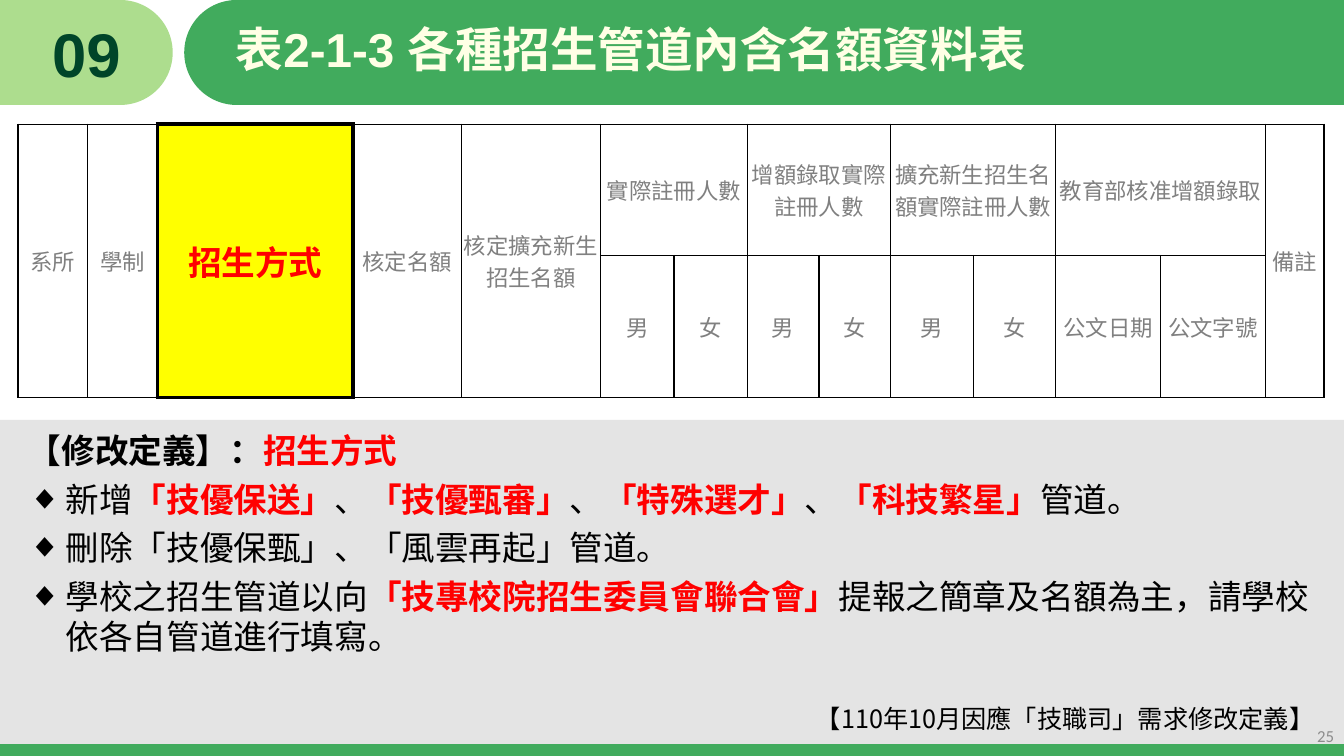
from lxml.etree import SubElement
from pptx import Presentation
from pptx.dml.color import RGBColor
from pptx.enum.shapes import MSO_SHAPE
from pptx.enum.text import MSO_ANCHOR, PP_ALIGN
from pptx.oxml.ns import qn
from pptx.util import Pt

WIDTH, HEIGHT = 960, 540
CJK = "Noto Sans CJK SC"
GREEN, LIGHT_GREEN, DARK_GREEN = "41AB5D", "ADDD8E", "004529"
BLACK, RED, GREY, YELLOW, WHITE = "000000", "FF0000", "808080", "FFFF00", "FFFFFF"

COLUMN_WIDTHS = [49.8, 49.8, 139.8, 77.4, 99.4, 52.4, 52.4,
                 51.2, 51.2, 59, 59, 74.8, 74.8, 42]
ROW_HEIGHTS = [93.6, 101.5]
# (column, heading, sub-headings)
HEADINGS = [
    (0, "系所", []),
    (1, "學制", []),
    (2, "招生方式", []),
    (3, "核定名額", []),
    (4, "核定擴充新生招生名額", []),
    (5, "實際註冊人數", ["男", "女"]),
    (7, "增額錄取實際註冊人數", ["男", "女"]),
    (9, "擴充新生招生名額實際註冊人數", ["男", "女"]),
    (11, "教育部核准增額錄取", ["公文日期", "公文字號"]),
    (13, "備註", []),
]
KEY_COLUMN = 2

# Each bullet is a list of (text, emphasised)
BULLETS = [
    [("新增", False), ("「技優保送」", True), ("、", False), ("「技優甄審」", True),
     ("、", False), ("「特殊選才」", True), ("、", False), ("「科技繁星」", True),
     ("管道。", False)],
    [("刪除「技優保甄」、「風雲再起」管道。", False)],
    [("學校之招生管道以向", False), ("「技專校院招生委員會聯合會」", True),
     ("提報之簡章及名額為主，請學校依各自管道進行填寫。", False)],
]


def colour(value):
    return RGBColor.from_string(value)


def set_all(target, **values):
    for name, value in values.items():
        setattr(target, name, value)


def add_span(para, text, size, fill, bold=False, font=CJK):
    span = para.add_run()
    span.text = text
    set_all(span.font, size=Pt(size), bold=bold, name=font)
    span.font.color.rgb = colour(fill)
    SubElement(span.font._element, qn("a:ea"), typeface=CJK)


def add_block(page, kind, left, top, width, height, fill):
    block = page.shapes.add_shape(kind, Pt(left), Pt(top), Pt(width), Pt(height))
    block.shadow.inherit = False
    block.fill.solid()
    block.fill.fore_color.rgb = colour(fill)
    block.line.fill.background()
    return block


def add_text_box(page, left, top, width, height, anchor, align):
    box = page.shapes.add_textbox(Pt(left), Pt(top), Pt(width), Pt(height))
    set_all(box.text_frame, word_wrap=True, vertical_anchor=anchor)
    para = box.text_frame.paragraphs[0]
    para.alignment = align
    return box.text_frame, para


def add_background(page, top, strip):
    panel = add_block(page, MSO_SHAPE.RECTANGLE, 0, top, WIDTH, HEIGHT - top, "BFBFBF")
    shade = panel.fill._xPr.find(qn("a:solidFill"))[0]
    SubElement(shade, qn("a:alpha"), val="41000")
    add_block(page, MSO_SHAPE.RECTANGLE, 0, HEIGHT - strip, WIDTH, strip, GREEN)


def add_header(page, height, number, title):
    # Number tab and title band, each with one round end
    tab, band = 123.4, 131.6
    radius = height / 2
    for kind, left, width, fill in [
        (MSO_SHAPE.RECTANGLE, 0, tab - radius, LIGHT_GREEN),
        (MSO_SHAPE.OVAL, tab - height, height, LIGHT_GREEN),
        (MSO_SHAPE.OVAL, band, height, GREEN),
        (MSO_SHAPE.RECTANGLE, band + radius, WIDTH - band - radius, GREEN),
    ]:
        add_block(page, kind, left, 0, width, height, fill)

    holder = page.shapes.title
    set_all(holder, left=Pt(161.3), top=Pt(0), width=Pt(784.8), height=Pt(height))
    set_all(holder.text_frame, word_wrap=True, vertical_anchor=MSO_ANCHOR.MIDDLE)
    para = holder.text_frame.paragraphs[0]
    set_all(para, alignment=PP_ALIGN.LEFT, line_spacing=0.9)
    add_span(para, title, 34, "FFFFE5", True, "Arial")

    para = add_text_box(page, 0, 0, tab, height, MSO_ANCHOR.MIDDLE, PP_ALIGN.CENTER)[1]
    add_span(para, number, 44, DARK_GREEN, True, "Arial")


def add_borders(cell, column):
    heavy = {"L": column in (KEY_COLUMN, KEY_COLUMN + 1),
             "R": column in (KEY_COLUMN - 1, KEY_COLUMN),
             "T": column == KEY_COLUMN, "B": column == KEY_COLUMN}
    for side, is_heavy in heavy.items():
        line = SubElement(cell._tc.get_or_add_tcPr(), qn(f"a:ln{side}"),
                          w=str(Pt(3 if is_heavy else 1)))
        SubElement(SubElement(line, qn("a:solidFill")), qn("a:srgbClr"), val=BLACK)


def add_quota_table(page, left, top):
    frame = page.shapes.add_table(len(ROW_HEIGHTS), len(COLUMN_WIDTHS), Pt(left), Pt(top),
                                  Pt(sum(COLUMN_WIDTHS)), Pt(sum(ROW_HEIGHTS)))
    table = frame.table
    set_all(table, first_row=False, horz_banding=False)
    for column, width in zip(table.columns, COLUMN_WIDTHS):
        column.width = Pt(width)
    for row, height in zip(table.rows, ROW_HEIGHTS):
        row.height = Pt(height)

    for row in range(len(ROW_HEIGHTS)):
        for column in range(len(COLUMN_WIDTHS)):
            cell = table.cell(row, column)
            add_borders(cell, column)
            cell.fill.solid()
            cell.fill.fore_color.rgb = colour(YELLOW if column == KEY_COLUMN else WHITE)
            set_all(cell, vertical_anchor=MSO_ANCHOR.MIDDLE, margin_left=Pt(1.4),
                    margin_right=Pt(1.4), margin_top=0, margin_bottom=0)

    def write(row, column, text):
        para = table.cell(row, column).text_frame.paragraphs[0]
        para.alignment = PP_ALIGN.CENTER
        is_key = column == KEY_COLUMN
        add_span(para, text, 24 if is_key else 16, RED if is_key else GREY, is_key)

    for column, heading, parts in HEADINGS:
        end = table.cell(0, column + 1) if parts else table.cell(1, column)
        table.cell(0, column).merge(end)
        write(0, column, heading)
        for offset, part in enumerate(parts):
            write(1, column + offset, part)


def add_definition(page, left, top, width, height):
    frame, para = add_text_box(page, left, top, width, height,
                               MSO_ANCHOR.TOP, PP_ALIGN.LEFT)
    para.line_spacing = Pt(28.6)
    add_span(para, "【修改定義】：", 24, BLACK, True)
    add_span(para, "招生方式", 24, RED, True)
    for bullet in BULLETS:
        para = frame.add_paragraph()
        set_all(para, line_spacing=Pt(28.6), space_before=Pt(6))
        properties = para._p.get_or_add_pPr()
        properties.set("marL", str(Pt(27)))
        properties.set("indent", str(-Pt(27)))
        SubElement(properties, qn("a:buFont"), typeface="Arial")
        SubElement(properties, qn("a:buChar"), char="◆")
        for text, emphasised in bullet:
            add_span(para, text, 24, RED if emphasised else BLACK, emphasised)

    # Closing note under the bullets
    para = add_text_box(page, left, top + height, width, 30,
                        MSO_ANCHOR.MIDDLE, PP_ALIGN.RIGHT)[1]
    add_span(para, "【110年10月因應「技職司」需求修改定義】", 18, BLACK)


def add_page_number(page, number):
    para = add_text_box(page, 744, 511.2, 216, 28.8, MSO_ANCHOR.MIDDLE, PP_ALIGN.RIGHT)[1]
    add_span(para, number, 12, "8C8C8C", font="Calibri")


def main():
    deck = Presentation()
    set_all(deck, slide_width=Pt(WIDTH), slide_height=Pt(HEIGHT))
    page = deck.slides.add_slide(deck.slide_layouts[5])
    # The title lies above the band
    add_background(page, 300, 8.4)
    add_header(page, 75, "09", "表2-1-3 各種招生管道內含名額資料表")
    tree = page.shapes._spTree
    tree.append(page.shapes.title._element)
    add_quota_table(page, 12.9, 88.8)
    add_definition(page, 12.9, 304, 933, 194)
    add_page_number(page, "25")
    deck.save("out.pptx")


if __name__ == "__main__":
    main()
